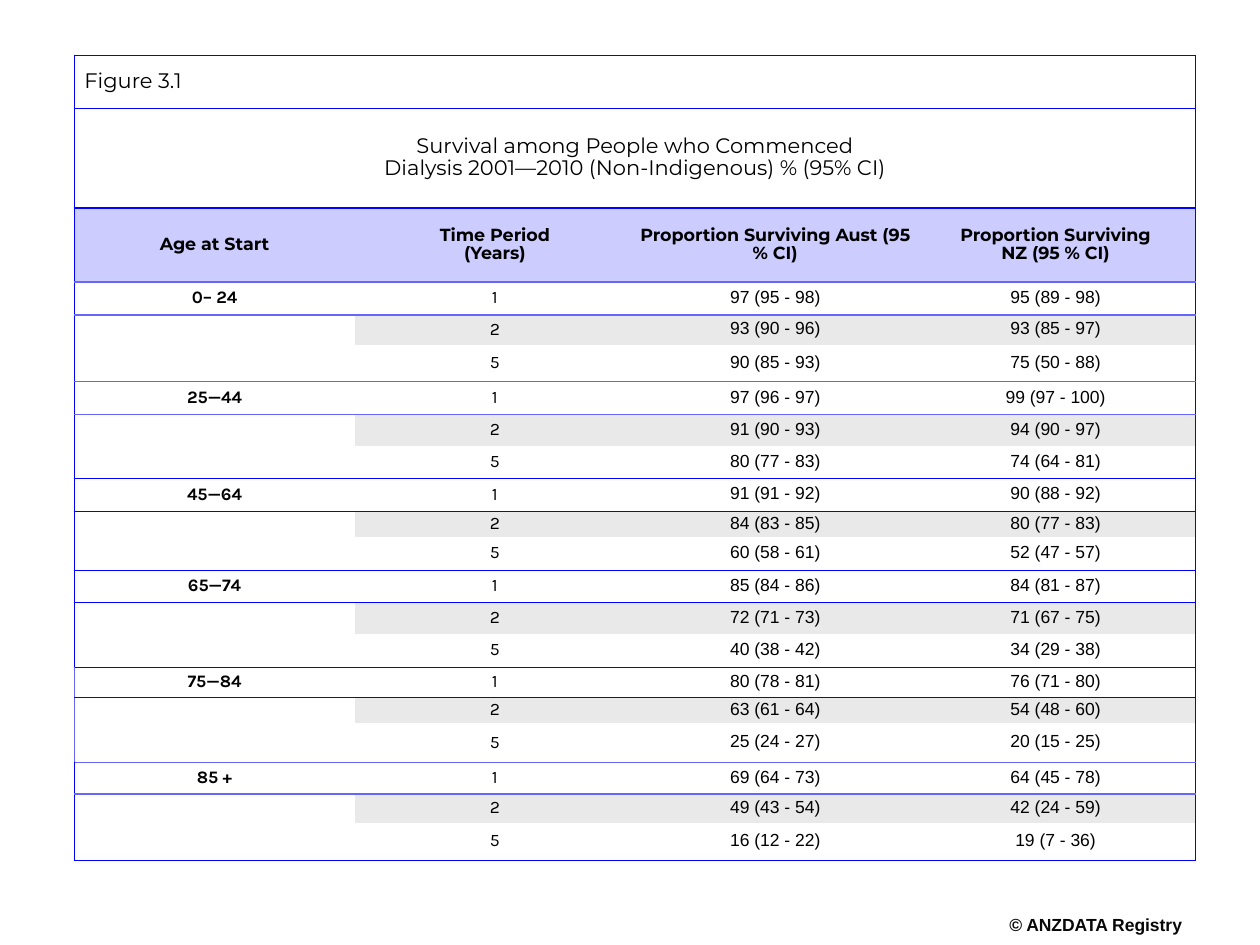
from typing import NamedTuple, Optional

from lxml.etree import SubElement
from pptx import Presentation
from pptx.dml.color import RGBColor
from pptx.enum.text import MSO_ANCHOR, PP_ALIGN
from pptx.oxml.ns import qn
from pptx.util import Inches, Pt

BLUE = RGBColor(0x00, 0x00, 0xFF)
SOFT_BLUE = RGBColor(0x66, 0x66, 0xFF)
HEADER_FILL = RGBColor(0xCC, 0xCC, 0xFF)
BAND_FILL = RGBColor(0xE9, 0xE9, 0xE9)
BLACK = RGBColor(0x00, 0x00, 0x00)
FOOTER_INK = RGBColor(0x08, 0x08, 0x08)
NO_STYLE_NO_GRID = "{2D5ABB26-0587-4C30-8999-92F81FD0307C}"
LINE_SPACING = 0.85


class Border(NamedTuple):
    color: RGBColor
    points: float


class TextStyle(NamedTuple):
    font: str = "Montserrat"
    size: int = 10
    bold: bool = False
    color: RGBColor = BLACK
    align: PP_ALIGN = PP_ALIGN.CENTER
    space_after: int = 0


class AgeGroup(NamedTuple):
    age: str
    australia: tuple
    new_zealand: tuple
    heights: tuple
    bottom: Border
    left: Border


STRONG = Border(BLUE, 1)
THIN = Border(BLUE, 0.5)
SOFT = Border(SOFT_BLUE, 1)

TITLE = TextStyle(size=12)
CAPTION = TITLE._replace(align=PP_ALIGN.LEFT)
HEADER = TextStyle(bold=True)
AGE = TextStyle(font="Karla", bold=True)
YEARS = TextStyle(font="Karla")
SURVIVAL = TextStyle(font="Arial", space_after=14)
FOOTER = TextStyle(font="Arial", bold=True, color=FOOTER_INK)

PERIODS = ("1", "2", "5")
HEADINGS = ("Age at Start", "Time Period\n(Years)",
            "Proportion Surviving Aust (95 % CI)",
            "Proportion Surviving\nNZ (95 % CI)")
HEADING_HEIGHTS = (0.42, 0.79, 0.59)
GROUPS = (
    AgeGroup("0– 24", ("97 (95 - 98)", "93 (90 - 96)", "90 (85 - 93)"),
             ("95 (89 - 98)", "93 (85 - 97)", "75 (50 - 88)"),
             (0.26, 0.24, 0.29), SOFT, STRONG),
    AgeGroup("25—44", ("97 (96 - 97)", "91 (90 - 93)", "80 (77 - 83)"),
             ("99 (97 - 100)", "94 (90 - 97)", "74 (64 - 81)"),
             (0.26, 0.25, 0.26), THIN, STRONG),
    AgeGroup("45—64", ("91 (91 - 92)", "84 (83 - 85)", "60 (58 - 61)"),
             ("90 (88 - 92)", "80 (77 - 83)", "52 (47 - 57)"),
             (0.26, 0.2, 0.26), THIN, STRONG),
    AgeGroup("65—74", ("85 (84 - 86)", "72 (71 - 73)", "40 (38 - 42)"),
             ("84 (81 - 87)", "71 (67 - 75)", "34 (29 - 38)"),
             (0.26, 0.25, 0.26), THIN, STRONG),
    AgeGroup("75—84", ("80 (78 - 81)", "63 (61 - 64)", "25 (24 - 27)"),
             ("76 (71 - 80)", "54 (48 - 60)", "20 (15 - 25)"),
             (0.24, 0.2, 0.31), SOFT, SOFT),
    AgeGroup("85 +", ("69 (64 - 73)", "49 (43 - 54)", "16 (12 - 22)"),
             ("64 (45 - 78)", "42 (24 - 59)", "19 (7 - 36)"),
             (0.25, 0.23, 0.3), STRONG, STRONG),
)


def write_text(text_frame, text: str, style: TextStyle) -> None:
    text_frame.text = text
    for paragraph in text_frame.paragraphs:
        paragraph.alignment = style.align
        paragraph.line_spacing = LINE_SPACING
        if style.space_after:
            paragraph.space_after = Pt(style.space_after)
        # An empty cell keeps the small size, so that its row stays low
        if not paragraph.runs:
            paragraph._p.get_or_add_endParaRPr().set("sz", str(style.size * 100))
        font_values = {"name": style.font, "size": Pt(style.size), "bold": style.bold}
        for run in paragraph.runs:
            for name, value in font_values.items():
                setattr(run.font, name, value)
            run.font.color.rgb = style.color


def draw_borders(cell, borders: dict) -> None:
    properties = cell._tc.get_or_add_tcPr()
    for side in "LRTB":
        border = borders.get(side)
        if border:
            line = SubElement(properties, qn(f"a:ln{side}"), w=str(Pt(border.points)))
            fill = SubElement(line, qn("a:solidFill"))
            SubElement(fill, qn("a:srgbClr"), val=str(border.color))


def fill_cell(cell, text: str, style: TextStyle, borders: dict,
              fill: Optional[RGBColor] = None) -> None:
    write_text(cell.text_frame, text, style)
    cell_format = {"vertical_anchor": MSO_ANCHOR.MIDDLE,
                   "margin_left": Inches(0.04), "margin_right": Inches(0.04),
                   "margin_top": Inches(0.02), "margin_bottom": Inches(0.02)}
    for name, value in cell_format.items():
        setattr(cell, name, value)
    draw_borders(cell, borders)
    if fill is None:
        cell.fill.background()
    else:
        cell.fill.solid()
        cell.fill.fore_color.rgb = fill


def side_borders(column: int, left: Border) -> dict:
    """Only the outer columns carry a vertical line."""
    return {0: {"L": left}, len(HEADINGS) - 1: {"R": STRONG}}.get(column, {})


def draw_headings(table) -> None:
    frame = dict.fromkeys("LRTB", STRONG)
    last = len(HEADINGS) - 1
    title = ("Survival among People who Commenced\n"
             "Dialysis 2001—2010 (Non-Indigenous) % (95% CI)")
    for row, (text, style) in enumerate((("Figure 3.1", CAPTION), (title, TITLE))):
        table.cell(row, 0).merge(table.cell(row, last))
        fill_cell(table.cell(row, 0), text, style, frame)
        for column in range(1, last + 1):
            draw_borders(table.cell(row, column), frame)
    table.cell(0, 0).margin_left = Inches(0.08)
    for column, heading in enumerate(HEADINGS):
        borders = {**side_borders(column, STRONG), "T": STRONG, "B": SOFT}
        fill_cell(table.cell(2, column), heading, HEADER, borders, HEADER_FILL)


def draw_group(table, first_row: int, group: AgeGroup, top: Border) -> None:
    styles = (AGE, YEARS, SURVIVAL, SURVIVAL)
    ages = (group.age, "", "")
    rows = zip(ages, PERIODS, group.australia, group.new_zealand)
    for index, texts in enumerate(rows):
        edge = {0: {"T": top}, len(PERIODS) - 1: {"B": group.bottom}}.get(index, {})
        for column, (text, style) in enumerate(zip(texts, styles)):
            banded = index == 1 and column > 0
            fill_cell(table.cell(first_row + index, column), text, style,
                      {**side_borders(column, group.left), **edge},
                      BAND_FILL if banded else None)


def main() -> None:
    presentation = Presentation()
    presentation.slide_width, presentation.slide_height = Inches(10), Inches(7.5)
    slide = presentation.slides.add_slide(presentation.slide_layouts[6])

    # Copyright line
    box = slide.shapes.add_textbox(Inches(7.99), Inches(7.28), Inches(1.41), Inches(0.17))
    for side in ("left", "right", "top", "bottom"):
        setattr(box.text_frame, f"margin_{side}", 0)
    box.text_frame.word_wrap = False
    write_text(box.text_frame, "© ANZDATA Registry", FOOTER)

    # Survival table
    heights = HEADING_HEIGHTS + sum((group.heights for group in GROUPS), ())
    table = slide.shapes.add_table(len(heights), len(HEADINGS), Inches(0.59), Inches(0.44),
                                   Inches(8.9), Inches(sum(heights))).table
    table.first_row = table.horz_banding = False
    table._tbl.tblPr.find(qn("a:tableStyleId")).text = NO_STYLE_NO_GRID
    for row, height in zip(table.rows, heights):
        row.height = Inches(height)

    draw_headings(table)
    top = SOFT
    for index, group in enumerate(GROUPS):
        draw_group(table, len(HEADING_HEIGHTS) + index * len(PERIODS), group, top)
        top = group.bottom

    presentation.save("out.pptx")


if __name__ == "__main__":
    main()
